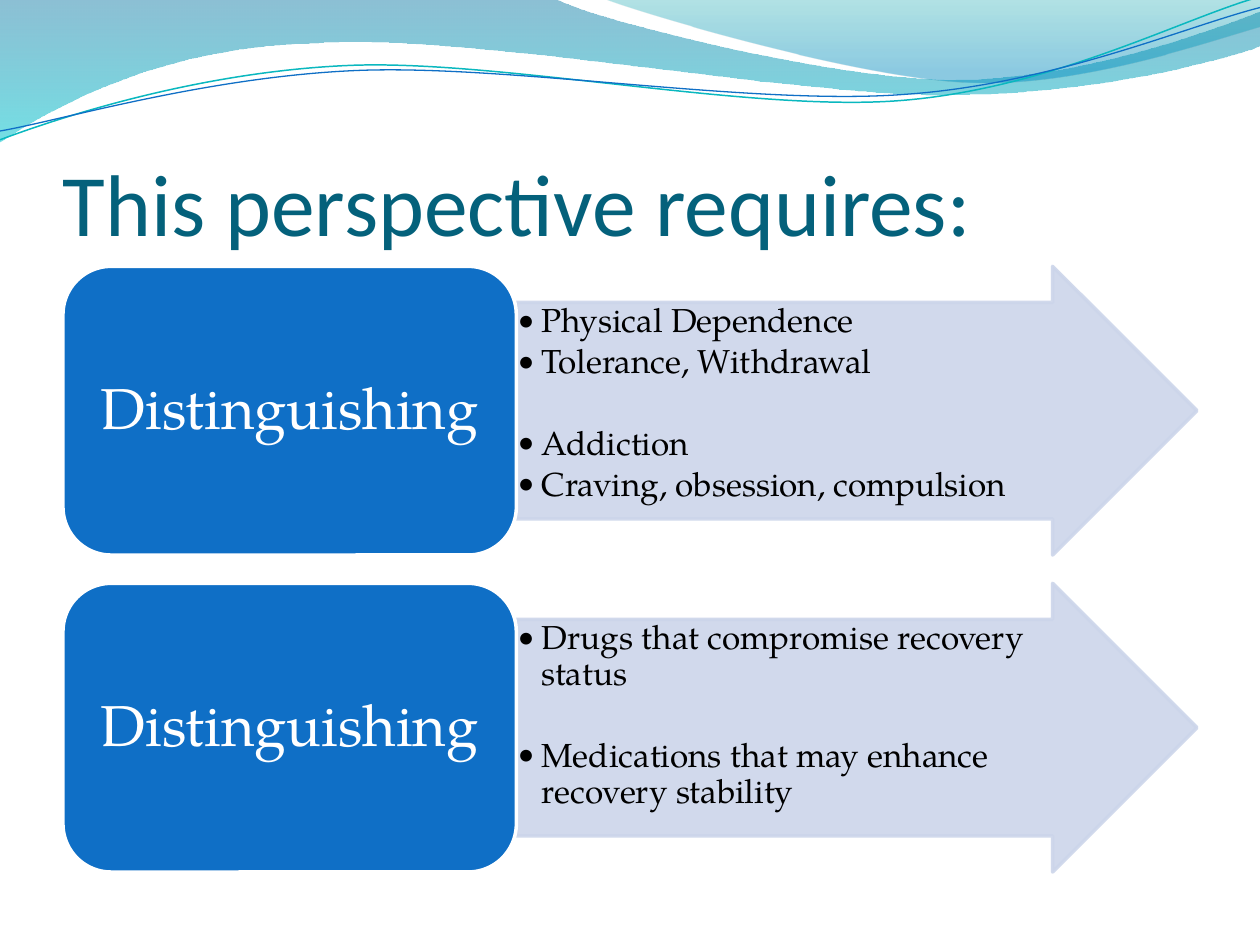
from dataclasses import dataclass
from typing import Iterable

from lxml import etree
from pptx import Presentation
from pptx.dml.color import RGBColor
from pptx.enum.shapes import MSO_SHAPE
from pptx.enum.text import MSO_ANCHOR, PP_ALIGN
from pptx.oxml.ns import qn
from pptx.shapes.autoshape import Shape
from pptx.slide import Slide
from pptx.text.text import TextFrame, _Paragraph
from pptx.util import Cm, Length, Pt

ROUNDED = MSO_SHAPE.ROUNDED_RECTANGLE
ARROW = MSO_SHAPE.RIGHT_ARROW
TOP, MIDDLE, BOTTOM = MSO_ANCHOR.TOP, MSO_ANCHOR.MIDDLE, MSO_ANCHOR.BOTTOM
CENTER = PP_ALIGN.CENTER

WHITE = RGBColor(0xFF, 0xFF, 0xFF)
BLACK = RGBColor(0x00, 0x00, 0x00)
TITLE_TEAL = RGBColor(0x04, 0x61, 0x7B)
BLUE = RGBColor(0x0F, 0x6F, 0xC6)
TURQUOISE = RGBColor(0x0A, 0xB8, 0xBF)
PALE_BLUE = RGBColor(0xCC, 0xD5, 0xEA)
DEEP_BLUE = RGBColor(0x00, 0x74, 0xA1)
CYAN = RGBColor(0x00, 0xC6, 0xCF)
GREEN_TEAL = RGBColor(0x00, 0xA1, 0xA9)
SKY_BLUE = RGBColor(0x00, 0x8B, 0xBF)

TITLE_FONT = "Calibri"
BODY_FONT = "TeX Gyre Pagella"

PATH_UNIT = Cm(2.54) / 100
ROW_TOP, ROW_PITCH, ROW_HEIGHT = Cm(5.37), Cm(6.39), Cm(5.82)
LABEL_LEFT, LABEL_WIDTH = Cm(1.27), Cm(9.14)
LABEL_INSET = Cm(0.28)
ARROW_LEFT, ARROW_WIDTH = Cm(10.41), Cm(13.72)
ARROW_SHAFT = 0.75
BULLET_WIDTH = Cm(11.53)
BULLET_INDENT = Cm(0.48)
GROUP_GAP = Pt(23.2)

Point = tuple[int, int]
Segment = tuple[Point, ...]


@dataclass(frozen=True)
class GradientStop:
    position: float
    color: RGBColor
    opacity: int


@dataclass(frozen=True)
class Wave:
    start: Point
    segments: tuple[Segment, ...]
    stops: tuple[GradientStop, ...]


@dataclass(frozen=True)
class Strand:
    start: Point
    segments: tuple[Segment, ...]
    color: RGBColor
    width: float


@dataclass(frozen=True)
class Row:
    label: str
    bullet_groups: tuple[tuple[str, ...], ...]


WAVES = (
    Wave((0, 0),
         (((440, -1),),
          ((476, 17), (664, 63), (758, 63)), ((853, 63), (958, 26), (1000, 9)),
          ((1001, 36),),
          ((983, 44), (870, 76), (746, 75)), ((622, 75), (382, 28), (257, 34)),
          ((129, 36), (46, 83), (-1, 113))),
         (GradientStop(0, DEEP_BLUE, 45), GradientStop(1, CYAN, 55))),
    Wave((479, -1),
         (((509, 11), (682, 62), (769, 65)), ((856, 69), (961, 32), (1000, 21)),
          ((1000, 0),)),
         (GradientStop(0, GREEN_TEAL, 30), GradientStop(0.8, SKY_BLUE, 45))),
)
STRANDS = (
    Strand((0, 111),
           (((48, 93), (158, 57), (277, 52)), ((395, 47), (593, 89), (713, 80)),
            ((833, 71), (938, 15), (998, -2))), TURQUOISE, 0.85),
    Strand((0, 104),
           (((47, 96), (164, 61), (283, 56)), ((403, 51), (597, 84), (717, 75)),
            ((836, 67), (941, 21), (1000, 6))), BLUE, 0.75),
)
ROWS = (
    Row("Distinguishing", (("Physical Dependence", "Tolerance, Withdrawal"),
                           ("Addiction", "Craving, obsession, compulsion"))),
    Row("Distinguishing", (("Drugs that compromise recovery status",),
                           ("Medications that may enhance recovery stability",))),
)


def set_opacities(shape: Shape, opacities: Iterable[int]) -> None:
    colors = shape._element.spPr.iter(qn("a:srgbClr"))
    for color, opacity in zip(list(colors), opacities):
        etree.SubElement(color, qn("a:alpha"), val=str(opacity * 1000))


def add_outline(slide: Slide, start: Point, segments: tuple[Segment, ...], closed: bool) -> Shape:
    builder = slide.shapes.build_freeform(*start, scale=PATH_UNIT)
    builder.add_line_segments([point for segment in segments for point in segment], close=closed)
    shape = builder.convert_to_shape()
    shape.shadow.inherit = False
    lines = iter(list(shape._element.spPr.iter(qn("a:lnTo"))))
    for segment in segments:
        members = [next(lines) for _ in segment]
        if len(members) == 3:
            curve = etree.Element(qn("a:cubicBezTo"))
            members[0].addprevious(curve)
            for member in members:
                curve.append(member[0])
                member.getparent().remove(member)
    return shape


def add_wave(slide: Slide, wave: Wave) -> None:
    shape = add_outline(slide, wave.start, wave.segments, True)
    shape.line.fill.background()
    shape.fill.gradient()
    shape.fill.gradient_angle = 270
    for target, stop in zip(shape.fill.gradient_stops, wave.stops):
        target.position = stop.position
        target.color.rgb = stop.color
    set_opacities(shape, [stop.opacity for stop in wave.stops])


def add_strand(slide: Slide, strand: Strand) -> None:
    shape = add_outline(slide, strand.start, strand.segments, False)
    shape.fill.background()
    shape.line.color.rgb = strand.color
    shape.line.width = Pt(strand.width)


def add_panel(slide: Slide, kind: int, left: Length, top: Length, width: Length,
              fill: RGBColor, line: RGBColor) -> Shape:
    shape = slide.shapes.add_shape(kind, left, top, width, ROW_HEIGHT)
    shape.shadow.inherit = False
    shape.fill.solid()
    shape.fill.fore_color.rgb = fill
    shape.line.color.rgb = line
    shape.line.width = Pt(2)
    return shape


def add_text_frame(slide: Slide, left: Length, top: Length, width: Length, height: Length,
                   anchor: int, side: Length, edge: Length) -> TextFrame:
    frame = slide.shapes.add_textbox(left, top, width, height).text_frame
    frame.word_wrap = True
    frame.vertical_anchor = anchor
    frame.margin_left = frame.margin_right = side
    frame.margin_top = frame.margin_bottom = edge
    return frame


def write(paragraph: _Paragraph, text: str, font: str, size: int, color: RGBColor) -> None:
    paragraph.text = text
    paragraph.font.name = font
    paragraph.font.size = Pt(size)
    paragraph.font.color.rgb = color


def add_bullets(frame: TextFrame, groups: tuple[tuple[str, ...], ...]) -> None:
    items = [(text, number > 0 and place == 0)
             for number, group in enumerate(groups) for place, text in enumerate(group)]
    for index, (text, opens_group) in enumerate(items):
        paragraph = frame.add_paragraph() if index else frame.paragraphs[0]
        paragraph.level = 1
        paragraph.line_spacing = 0.9
        paragraph.space_before = GROUP_GAP if opens_group else Pt(0)
        paragraph.space_after = Pt(2.85)
        properties = paragraph._p.get_or_add_pPr()
        properties.set("marL", str(BULLET_INDENT))
        properties.set("indent", str(-BULLET_INDENT))
        etree.SubElement(properties, qn("a:buFont"), typeface=TITLE_FONT)
        etree.SubElement(properties, qn("a:buChar"), char="•")
        write(paragraph, text, BODY_FONT, 19, BLACK)


def add_row(slide: Slide, row: Row, top: Length) -> None:
    arrow = add_panel(slide, ARROW, ARROW_LEFT, top, ARROW_WIDTH, PALE_BLUE, PALE_BLUE)
    arrow.adjustments[0] = ARROW_SHAFT
    set_opacities(arrow, (90, 90))
    shaft_height = int(ROW_HEIGHT * ARROW_SHAFT)
    shaft_top = top + (ROW_HEIGHT - shaft_height) // 2
    bullets = add_text_frame(slide, ARROW_LEFT, shaft_top, BULLET_WIDTH, shaft_height,
                             TOP, Cm(0.03), Cm(0.03))
    add_bullets(bullets, row.bullet_groups)
    add_panel(slide, ROUNDED, LABEL_LEFT, top, LABEL_WIDTH, BLUE, WHITE)
    label = add_text_frame(slide, LABEL_LEFT + LABEL_INSET, top + LABEL_INSET,
                           LABEL_WIDTH - 2 * LABEL_INSET, ROW_HEIGHT - 2 * LABEL_INSET,
                           MIDDLE, Cm(0.35), Cm(0.18))
    paragraph = label.paragraphs[0]
    paragraph.alignment = CENTER
    paragraph.line_spacing = 0.9
    write(paragraph, row.label, BODY_FONT, 33, WHITE)


def main() -> None:
    presentation = Presentation()
    presentation.slide_width, presentation.slide_height = Cm(25.4), Cm(19.05)
    slide = presentation.slides.add_slide(presentation.slide_layouts[6])
    for wave in WAVES:
        add_wave(slide, wave)
    for strand in STRANDS:
        add_strand(slide, strand)
    title = add_text_frame(slide, Cm(1.27), Cm(1.95), Cm(22.86), Cm(3.18),
                           BOTTOM, Cm(0), Cm(0))
    write(title.paragraphs[0], "This perspective requires:", TITLE_FONT, 50, TITLE_TEAL)
    for index, row in enumerate(ROWS):
        add_row(slide, row, ROW_TOP + index * ROW_PITCH)
    presentation.save("out.pptx")


if __name__ == "__main__":
    main()
